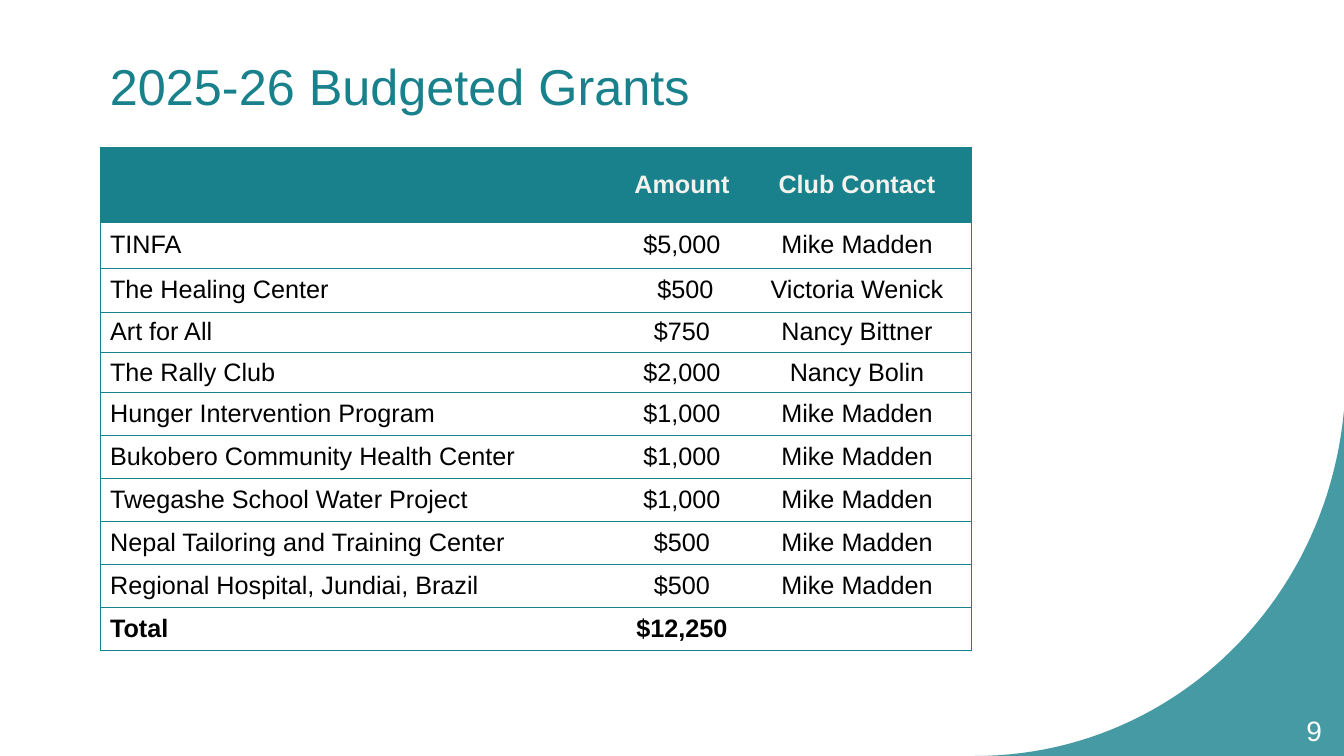
from dataclasses import dataclass

from lxml import etree
from pptx import Presentation
from pptx import util as u
from pptx.dml.color import RGBColor
from pptx.enum import text
from pptx.oxml import ns

PX = 914400 / 100.8
LEFT, CENTER, RIGHT = text.PP_ALIGN.LEFT, text.PP_ALIGN.CENTER, text.PP_ALIGN.RIGHT


@dataclass(frozen=True)
class Theme:
    font: str = "Arial"
    teal: str = "18818C"
    cream: str = "F4F2EC"
    black: str = "000000"
    white: str = "FFFFFF"
    title: int = 36
    body: int = 18
    number: int = 20
    border: float = 0.5
    curve_alpha: int = 80


T = Theme()

GRANTS = [
    ("", "Amount", "Club Contact"),
    ("TINFA", "$5,000", "Mike Madden"),
    ("The Healing Center", " $500", "Victoria Wenick"),
    ("Art for All", "$750", "Nancy Bittner"),
    ("The Rally Club", "$2,000", "Nancy Bolin"),
    ("Hunger Intervention Program", "$1,000", "Mike Madden"),
    ("Bukobero Community Health Center", "$1,000", "Mike Madden"),
    ("Twegashe School Water Project", "$1,000", "Mike Madden"),
    ("Nepal Tailoring and Training Center", "$500", "Mike Madden"),
    ("Regional Hospital, Jundiai, Brazil", "$500", "Mike Madden"),
    ("Total", "$12,250", ""),
]
COLS = [521, 122, 228]
ROWS = [75, 46, 44, 38, 38] + [43] * 6
NO_STYLE = "{2D5ABB26-0587-4C30-8999-92F81FD0307C}"


def px(*lengths):
    return [u.Emu(round(n * PX)) for n in lengths]


def write(tf, words, align, **fmt):
    p = tf.paragraphs[0]
    p.alignment = align
    color = fmt.pop("color")
    fonts = [p.font]
    if words:
        r = p.add_run()
        r.text = words
        fonts = [r.font]
    for font in fonts:
        for name, value in {"name": T.font, **fmt}.items():
            setattr(font, name, value)
        font.color.rgb = RGBColor.from_string(color)


def text_box(s, box, words, align, **fmt):
    tf = s.shapes.add_textbox(*px(*box)).text_frame
    tf.word_wrap = True
    tf.vertical_anchor = text.MSO_ANCHOR.MIDDLE
    write(tf, words, align, **fmt)


def corner_curve(s, box, steps=48):
    """Fill the area below a curve from bottom left to top right of the box."""
    x, y, w, h = box
    ends = [(0, 1), (0.52, 1), (0.95, 0.57), (1, 0)]
    points = []
    for i in range(steps + 1):
        t = i / steps
        weights = [(1 - t) ** 3, 3 * t * (1 - t) ** 2, 3 * t * t * (1 - t), t ** 3]
        points.append(tuple(
            round((start + size * sum(k * e[axis] for k, e in zip(weights, ends))) * PX)
            for axis, (start, size) in enumerate([(x, w), (y, h)])))
    points.append(tuple(px(x + w, y + h)))
    fb = s.shapes.build_freeform(*points[0], scale=1.0)
    fb.add_line_segments(points[1:], close=True)
    sp = fb.convert_to_shape()
    sp.shadow.inherit = False
    sp.line.fill.background()
    sp.fill.solid()
    sp.fill.fore_color.rgb = RGBColor.from_string(T.teal)
    color = sp.fill._xPr.find(".//" + ns.qn("a:srgbClr"))
    etree.SubElement(color, ns.qn("a:alpha"), val=str(T.curve_alpha * 1000))


def cell_borders(cell, sides):
    tcPr = cell._tc.get_or_add_tcPr()
    for side in "LRTB":
        shown = side in sides
        ln = etree.SubElement(tcPr, ns.qn("a:ln" + side),
                              w=str(u.Pt(T.border) if shown else 0))
        fill = etree.SubElement(ln, ns.qn("a:solidFill" if shown else "a:noFill"))
        if shown:
            etree.SubElement(fill, ns.qn("a:srgbClr"), val=T.teal)


def grants_table(s, box):
    frame = s.shapes.add_table(len(ROWS), len(COLS), *px(*box))
    table = frame.table
    table.horz_banding = False
    table._tbl.tblPr.find(ns.qn("a:tableStyleId")).text = NO_STYLE
    for col, width in zip(table.columns, px(*COLS)):
        col.width = width
    for row, height in zip(table.rows, px(*ROWS)):
        row.height = height

    for i, words in enumerate(GRANTS):
        header, total = i == 0, i == len(GRANTS) - 1
        for j, word in enumerate(words):
            cell = table.cell(i, j)
            cell.vertical_anchor = text.MSO_ANCHOR.MIDDLE
            # Rules between rows, and an outline at both ends
            cell_borders(cell, "TB" + {0: "L", len(COLS) - 1: "R"}.get(j, ""))
            if header:
                cell.fill.solid()
                cell.fill.fore_color.rgb = RGBColor.from_string(T.teal)
            else:
                cell.fill.background()
            write(cell.text_frame, word, CENTER if j else LEFT, size=u.Pt(T.body),
                  bold=header or total, color=T.cream if header else T.black)


def grants_slide(prs):
    s = prs.slides.add_slide(prs.slide_layouts[6])
    # Corner decoration
    corner_curve(s, (975, 411, 369, 345))
    # Title
    text_box(s, (100, 50, 1093, 70), "2025-26 Budgeted Grants", LEFT,
             size=u.Pt(T.title), color=T.teal)
    # Grants
    grants_table(s, (100, 147, sum(COLS), sum(ROWS)))
    # Page number
    text_box(s, (1256, 710, 76, 40), "9", RIGHT, size=u.Pt(T.number), color=T.white)


def main():
    prs = Presentation()
    prs.slide_width, prs.slide_height = px(1344, 756)
    grants_slide(prs)
    prs.save("out.pptx")


if __name__ == "__main__":
    main()
